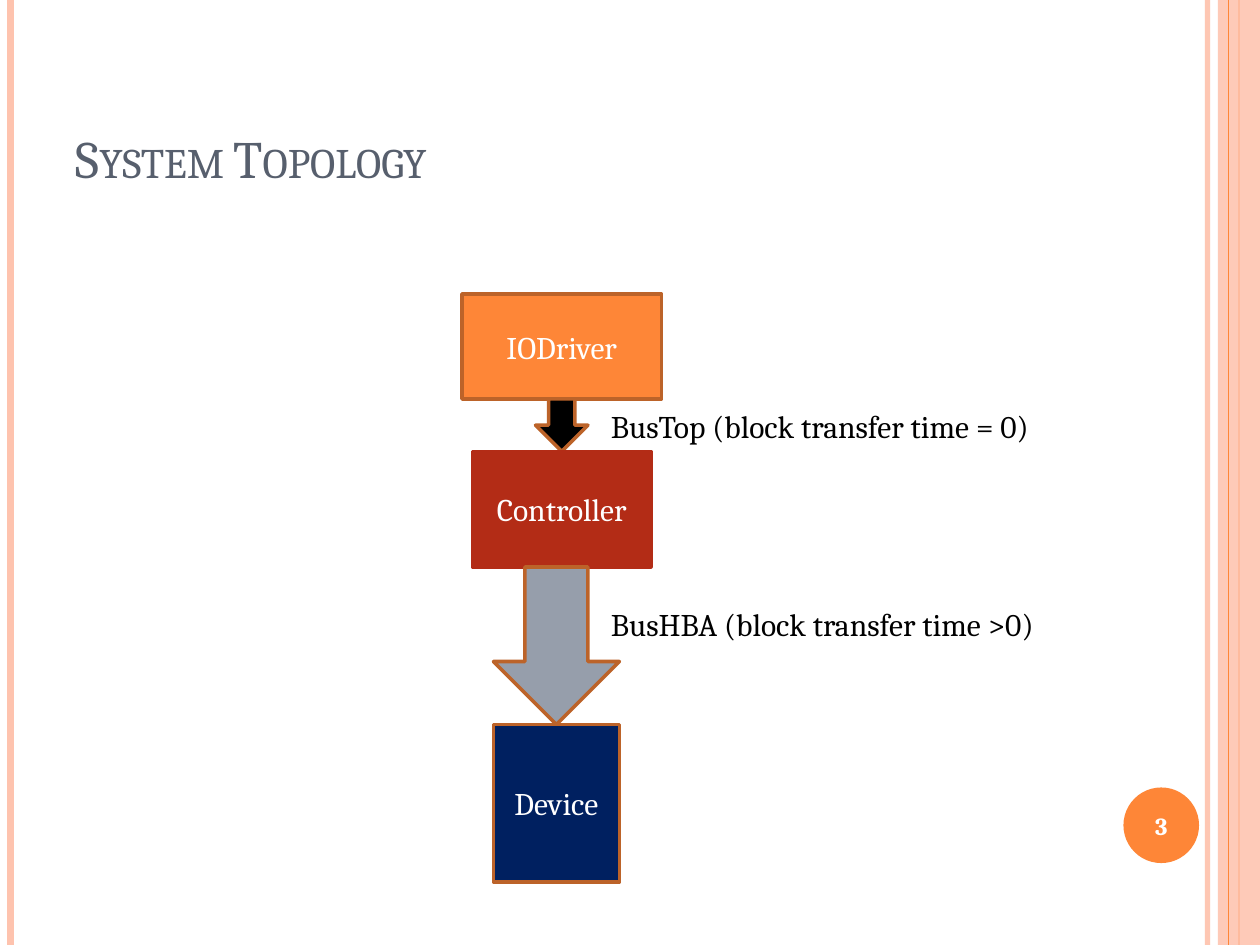
from lxml import etree
from pptx import Presentation
from pptx import util as u
from pptx.dml.color import RGBColor
from pptx.enum import shapes, text
from pptx.oxml.ns import qn

FONT = "Cambria"
ORANGE = RGBColor(0xFE, 0x86, 0x37)
BROWN = RGBColor(0xBC, 0x63, 0x29)
PEACH = RGBColor(0xFE, 0xC3, 0xAE)
RED = RGBColor(0xB3, 0x2C, 0x16)
GREY = RGBColor(0x96, 0x9E, 0xAB)
NAVY = RGBColor(0x00, 0x20, 0x60)
SLATE = RGBColor(0x57, 0x5F, 0x6D)
BLACK = RGBColor(0, 0, 0)
WHITE = RGBColor(0xFF, 0xFF, 0xFF)

CELL = u.Inches(1) // 12  # the slide is a grid of 120 columns by 90 rows
COLS, ROWS = 120, 90
RECT = shapes.MSO_SHAPE.RECTANGLE
ARROW = shapes.MSO_SHAPE.DOWN_ARROW


def grid(*cells):
    return [u.Emu(round(c * CELL)) for c in cells]


def set_alpha(fmt, percent):
    """Make a solid fill partly transparent."""
    color = fmt._xPr.find(qn("a:solidFill"))[0]
    etree.SubElement(color, qn("a:alpha"), val=str(percent * 1000))


def write(sp, words, size, color, align=text.PP_ALIGN.CENTER, bold=False,
          anchor=text.MSO_ANCHOR.MIDDLE, wrap=True):
    tf = sp.text_frame
    tf.word_wrap = wrap
    tf.vertical_anchor = anchor
    p = tf.paragraphs[0]
    p.alignment = align
    r = p.add_run()
    r.text = words
    for font in (p.font, r.font):
        font.name, font.size, font.bold = FONT, u.Pt(size), bold
        font.color.rgb = color
    return r


def add_block(s, kind, box, fill, line=None, words=None):
    sp = s.shapes.add_shape(kind, *grid(*box))
    sp.shadow.inherit = False
    sp.fill.solid()
    sp.fill.fore_color.rgb = fill
    if line is None:
        sp.line.fill.background()
    else:
        sp.line.color.rgb = line
        sp.line.width = u.Pt(2)
    if words:
        write(sp, words, 18, WHITE)
    return sp


def add_stripe(s, x, color, width, alpha=100):
    """Draw a line down the full height of the slide at column x."""
    line = s.shapes.add_connector(shapes.MSO_CONNECTOR.STRAIGHT,
                                  *grid(x, 0, x, ROWS))
    line.line.color.rgb = color
    line.line.width = u.Pt(width)
    if alpha < 100:
        set_alpha(line.line.fill, alpha)
    etree.SubElement(line._element.spPr, qn("a:effectLst"))


def add_border(s):
    add_stripe(s, 115, PEACH, 3, alpha=93)
    add_stripe(s, 1, PEACH, 4.5)
    add_stripe(s, 118, ORANGE, 1.5)
    band = add_block(s, RECT, (116, 0, COLS - 116, ROWS), PEACH)
    set_alpha(band.fill, 87)
    add_stripe(s, 117, ORANGE, 0.75)


def add_page_number(s, box, number):
    x, y, size = box
    add_block(s, shapes.MSO_SHAPE.OVAL, (x, y, size, size), ORANGE)
    sp = s.shapes.add_textbox(*grid(x - 0.4, y + 0.2, size + 0.8, size - 0.4))
    write(sp, number, 14, WHITE, bold=True)


def add_title(s, box, words):
    sp = s.shapes.title
    sp.left, sp.top, sp.width, sp.height = grid(*box)
    r = write(sp, words, 30, SLATE, text.PP_ALIGN.LEFT,
              anchor=text.MSO_ANCHOR.BOTTOM)
    r.font._element.set("cap", "small")


def add_topology(s, left, top):
    """Stack the devices and the buses between them, from the top down."""
    parts = [  # kind, column offset, width, height, fill, line, words
        (RECT, 0, 19, 10, ORANGE, BROWN, "IODriver"),
        (ARROW, 7, 5, 5, BLACK, BROWN, None),
        (RECT, 1, 17, 11, RED, RED, "Controller"),
        (ARROW, 3, 12, 15, GREY, BROWN, None),
        (RECT, 3, 12, 15, NAVY, BROWN, "Device"),
    ]
    y = top
    for kind, dx, w, h, fill, line, words in parts:
        add_block(s, kind, (left + dx, y, w, h), fill, line, words)
        y += h
    labels = [(10.2, 48, True, "BusTop (block transfer time = 0)"),
              (29, 49.5, False, "BusHBA (block transfer time >0)")]
    for dy, w, wrap, words in labels:
        sp = s.shapes.add_textbox(*grid(left + 13, top + dy, w, 4.8))
        write(sp, words, 18, BLACK, text.PP_ALIGN.LEFT,
              anchor=text.MSO_ANCHOR.TOP, wrap=wrap)


def main():
    prs = Presentation()
    prs.slide_width, prs.slide_height = grid(COLS, ROWS)
    s = prs.slides.add_slide(prs.slide_layouts[5])
    add_border(s)
    add_title(s, (6, 3.6, 98, 15), "System Topology")
    add_topology(s, left=44, top=28)
    add_page_number(s, (107, 75, 7.2), "3")
    prs.save("out.pptx")


if __name__ == "__main__":
    main()
